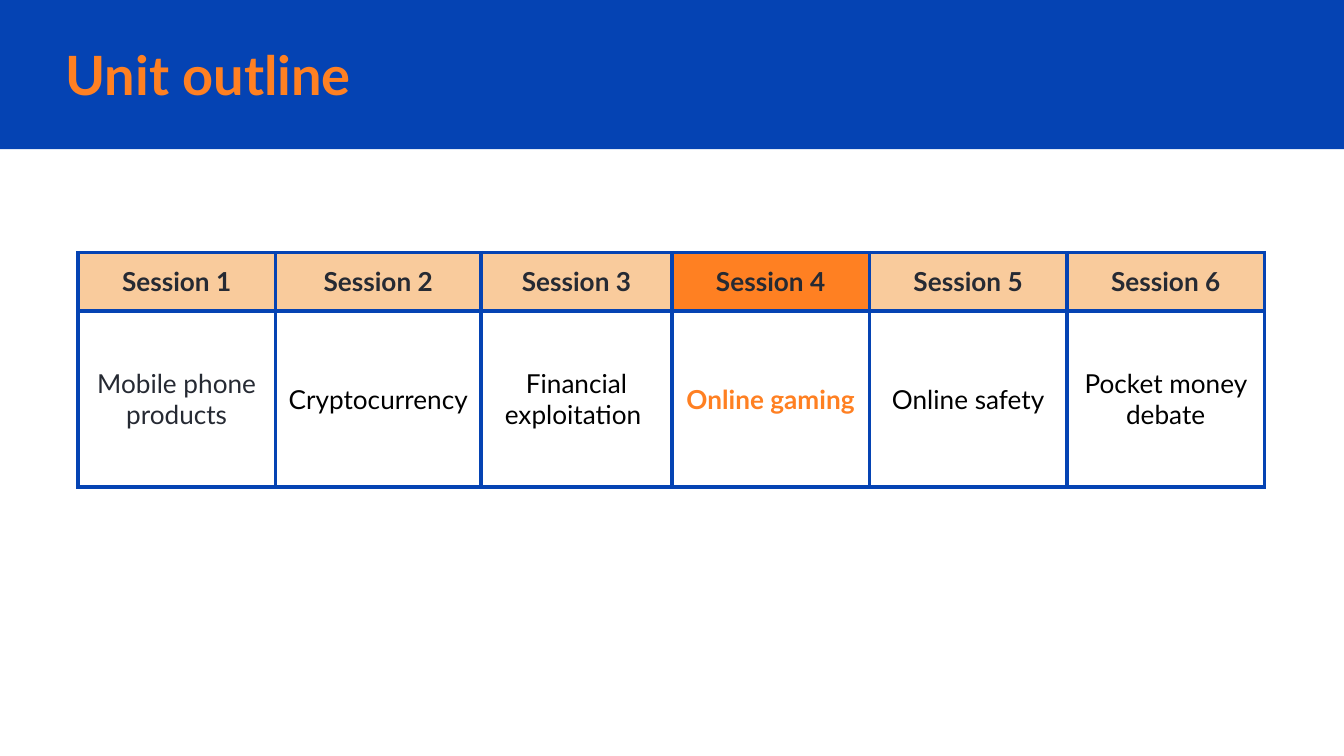
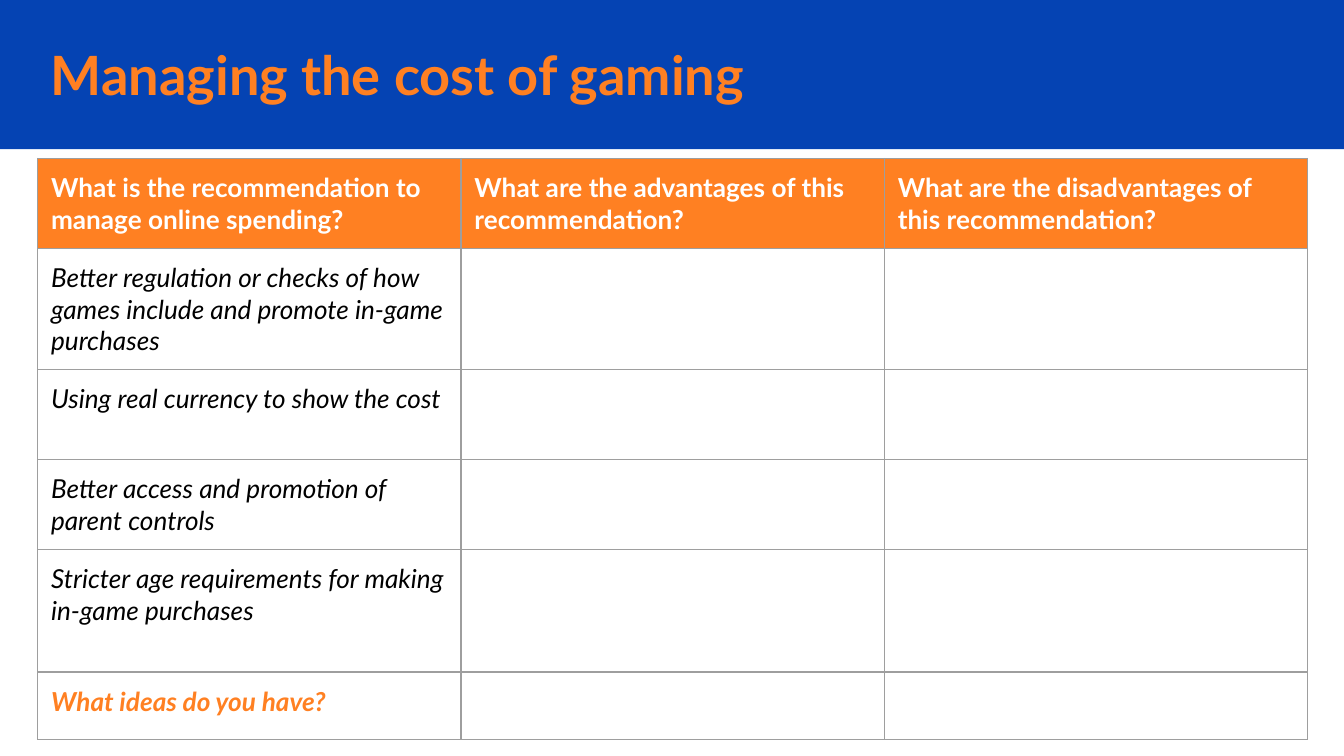
import pptx
import pptx.dml.color
import pptx.enum.shapes
import pptx.enum.text
import pptx.oxml
import pptx.oxml.ns
import pptx.util

Inches = pptx.util.Inches
ANCHOR = pptx.enum.text.MSO_ANCHOR
ALIGN = pptx.enum.text.PP_ALIGN

# Shared look
FONT = "Lato"
BLUE, ORANGE, PEACH = "0543B3", "FF8022", "F9CB9C"
INK, BLACK, WHITE, GREY = "262A33", "000000", "FFFFFF", "9E9E9E"
SLIDE_WIDTH = 10
SLIDE_HEIGHT = SLIDE_WIDTH * 9 / 16
BAND_HEIGHT = 1.11


def colour(value):
    return pptx.dml.color.RGBColor.from_string(value)


def write_text(frame, text, size=14, color=BLACK, bold=False, italic=False,
               align=ALIGN.LEFT):
    frame.word_wrap = True
    paragraph = frame.paragraphs[0]
    paragraph.alignment = align
    run = paragraph.add_run()
    run.text = text
    font = run.font
    font.name, font.size = FONT, pptx.util.Pt(size)
    font.bold, font.italic = bold, italic
    font.color.rgb = colour(color)


def set_margins(target, inset):
    target.margin_left = target.margin_right = Inches(inset)
    target.margin_top = target.margin_bottom = Inches(inset)


def set_borders(cell, color, width):
    properties = cell._tc.get_or_add_tcPr()
    for index, side in enumerate(("lnL", "lnR", "lnT", "lnB")):
        line = pptx.oxml.parse_xml(
            f'<a:{side} {pptx.oxml.ns.nsdecls("a")} w="{pptx.util.Pt(width)}">'
            f'<a:solidFill><a:srgbClr val="{color}"/></a:solidFill>'
            f'<a:prstDash val="solid"/></a:{side}>')
        properties.insert(index, line)


def fill_cell(cell, text, fill=None, inset=0.1, anchor=ANCHOR.TOP, **text_format):
    set_margins(cell, inset)
    cell.vertical_anchor = anchor
    if fill:
        cell.fill.solid()
        cell.fill.fore_color.rgb = colour(fill)
    else:
        cell.fill.background()
    write_text(cell.text_frame, text, **text_format)


def add_grid(slide, left, top, widths, heights, border, border_width):
    """Add a plain bordered table and return it."""
    frame = slide.shapes.add_table(
        len(heights), len(widths), Inches(left), Inches(top),
        Inches(sum(widths)), Inches(sum(heights)))
    table = frame.table
    table.first_row = table.horz_banding = False
    for column, width in zip(table.columns, widths):
        column.width = Inches(width)
    for row, height in zip(table.rows, heights):
        row.height = Inches(height)
    for cell in table.iter_cells():
        set_borders(cell, border, border_width)
    return table


def add_titled_slide(presentation, title, title_left):
    slide = presentation.slides.add_slide(presentation.slide_layouts[6])
    # Title band
    band = slide.shapes.add_shape(
        pptx.enum.shapes.MSO_SHAPE.RECTANGLE, 0, 0,
        Inches(SLIDE_WIDTH), Inches(BAND_HEIGHT))
    band.shadow.inherit = False
    band.fill.solid()
    band.fill.fore_color.rgb = colour(BLUE)
    band.line.fill.background()
    # Title
    box = slide.shapes.add_textbox(
        Inches(title_left), Inches(0.27), Inches(8.46), Inches(0.56))
    set_margins(box.text_frame, 0.1)
    box.text_frame.vertical_anchor = ANCHOR.MIDDLE
    write_text(box.text_frame, title, size=29, color=ORANGE, bold=True)
    return slide


def add_session_table(slide, left, top, topics, current):
    """Sessions across the top, topics below, the current one highlighted."""
    widths = [1.47, 1.53, 1.42, 1.47, 1.47, 1.47]
    table = add_grid(slide, left, top, widths, [0.43, 1.31], BLUE, 2.25)
    centred = {"anchor": ANCHOR.MIDDLE, "align": ALIGN.CENTER}
    for index, topic in enumerate(topics):
        active = index + 1 == current
        topic_color = ORANGE if active else INK if index == 0 else BLACK
        fill_cell(table.cell(0, index), f"Session {index + 1}",
                  fill=ORANGE if active else PEACH, color=INK, bold=True, **centred)
        fill_cell(table.cell(1, index), topic, inset=0.07,
                  color=topic_color, bold=active, **centred)


def add_recommendation_table(slide, left, top, questions, recommendations, prompt):
    """Question headings, one row per recommendation and a closing prompt."""
    heights = [0.67, 0.9, 0.67, 0.67, 0.91, 0.43]
    table = add_grid(slide, left, top, [3.15] * len(questions), heights, GREY, 0.75)
    for column, question in enumerate(questions):
        fill_cell(table.cell(0, column), question, fill=ORANGE,
                  color=WHITE, bold=True)
    for row, text in enumerate(recommendations + [prompt], start=1):
        is_prompt = text == prompt
        fill_cell(table.cell(row, 0), text, fill=WHITE, italic=True,
                  bold=is_prompt, color=ORANGE if is_prompt else BLACK)
        # Answer cells stay empty; their text size sets the last row's height
        for column in range(1, len(questions)):
            fill_cell(table.cell(row, column), "", fill=WHITE, size=17)


def main():
    presentation = pptx.Presentation()
    presentation.slide_width = Inches(SLIDE_WIDTH)
    presentation.slide_height = Inches(SLIDE_HEIGHT)

    outline = add_titled_slide(presentation, "Unit outline", 0.39)
    add_session_table(
        outline, 0.58, 1.88,
        ["Mobile phone products", "Cryptocurrency", "Financial exploitation ",
         "Online gaming", "Online safety", "Pocket money debate"],
        current=4)

    costs = add_titled_slide(presentation, "Managing the cost of gaming", 0.28)
    add_recommendation_table(
        costs, 0.28, 1.18,
        ["What is the recommendation to manage online spending?",
         "What are the advantages of this recommendation?",
         "What are the disadvantages of this recommendation?"],
        ["Better regulation or checks of how games include and promote "
         "in-game purchases",
         "Using real currency to show the cost",
         "Better access and promotion of parent controls",
         "Stricter age requirements for making in-game purchases"],
        "What ideas do you have?")

    presentation.save("out.pptx")


if __name__ == "__main__":
    main()
